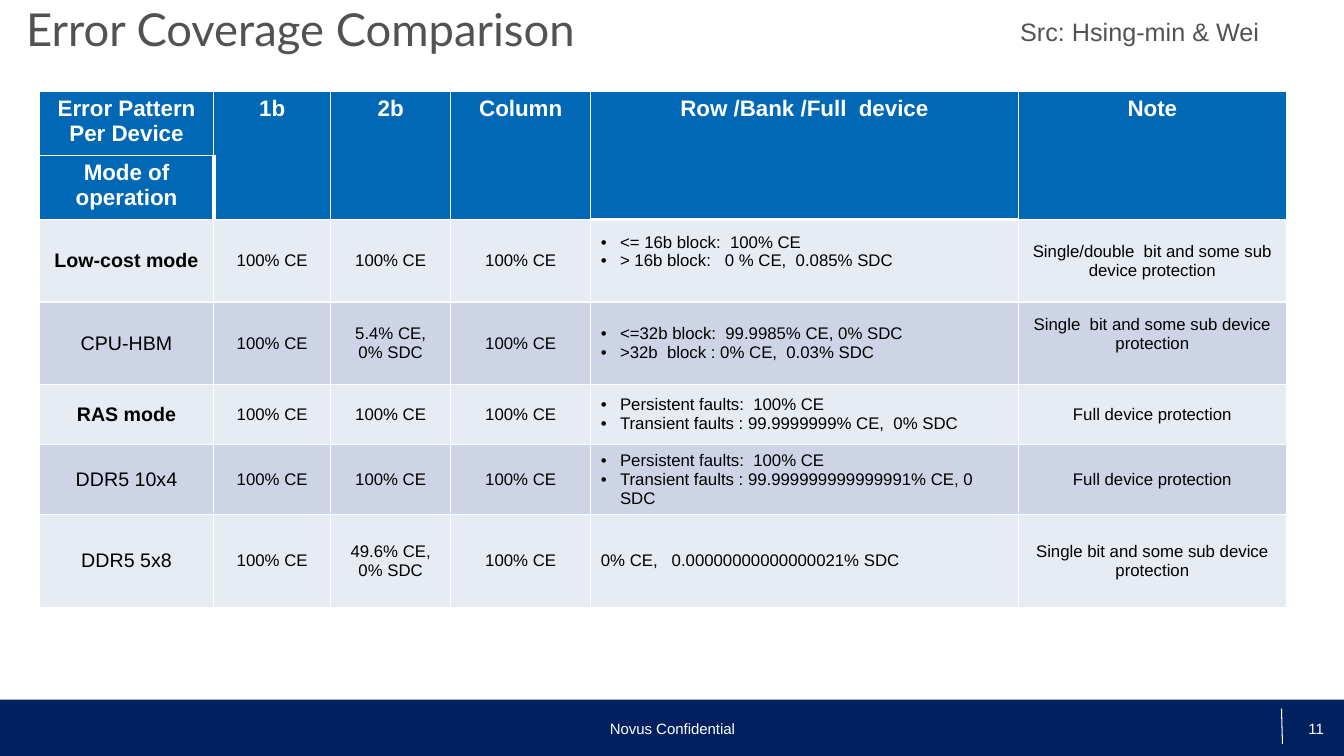
from dataclasses import dataclass

from lxml import etree
from pptx import Presentation
from pptx.dml.color import RGBColor
from pptx.enum.shapes import MSO_CONNECTOR, MSO_SHAPE
from pptx.enum.text import MSO_ANCHOR, PP_ALIGN
from pptx.oxml.ns import qn
from pptx.util import Inches, Pt

LEFT, CENTER, RIGHT = PP_ALIGN.LEFT, PP_ALIGN.CENTER, PP_ALIGN.RIGHT
TOP, MIDDLE = MSO_ANCHOR.TOP, MSO_ANCHOR.MIDDLE
RECTANGLE = MSO_SHAPE.RECTANGLE
STRAIGHT = MSO_CONNECTOR.STRAIGHT


@dataclass(frozen=True)
class Theme:
    white: str = "FFFFFF"
    black: str = "000000"
    grey: str = "525252"
    navy: str = "002060"
    header: str = "0068B5"
    bands: tuple = ("E7EBF3", "CCD4E5")
    body_font: str = "Arial"
    title_font: str = "Lato"
    title: float = 32.4
    source: float = 18
    heading: float = 16
    mode: float = 14
    cell: float = 12
    footer: float = 10.7
    border: float = 1
    thick: float = 3


T = Theme()

COLS = [1.73, 1.16, 1.19, 1.39, 4.24, 2.66]
ROWS = [0.63, 0.63, 0.82, 0.82, 0.59, 0.7, 0.92]
HEADINGS = ["Error Pattern Per Device", "1b", "2b", "Column",
            "Row /Bank /Full  device", "Note"]
FULL = "100% CE"
MODES = [
    ["Low-cost mode", FULL, FULL, FULL,
     "<= 16b block:  100% CE\n> 16b block:   0 % CE,  0.085% SDC",
     "Single/double  bit and some sub device protection"],
    ["CPU-HBM", FULL, "5.4% CE,\n0% SDC", FULL,
     "<=32b block:  99.9985% CE, 0% SDC\n>32b  block : 0% CE,  0.03% SDC",
     "Single  bit and some sub device protection"],
    ["RAS mode", FULL, FULL, FULL,
     "Persistent faults:  100% CE\nTransient faults : 99.9999999% CE,  0% SDC",
     "Full device protection"],
    ["DDR5 10x4", FULL, FULL, FULL,
     "Persistent faults:  100% CE\n"
     "Transient faults : 99.999999999999991% CE, 0 SDC",
     "Full device protection"],
    ["DDR5 5x8", FULL, "49.6% CE, 0% SDC", FULL,
     "0% CE,   0.00000000000000021% SDC",
     "Single bit and some sub device protection"],
]
BOLD_MODES = {"Low-cost mode", "RAS mode"}
DEVICE_COL = 4
RAISED = {(2, 4), (3, 5)}  # cells whose text sits above the middle
THICK = {(1, 0): "R", (1, DEVICE_COL): "B", (2, DEVICE_COL): "T"}


def rgb(color):
    return RGBColor.from_string(color)


def style(p, size, color, font=T.body_font, bold=False, align=LEFT):
    p.alignment = align
    for r in p.runs:
        r.font.name = font
        r.font.size = Pt(size)
        r.font.bold = bold
        r.font.color.rgb = rgb(color)


def add_text(slide, box, text, size, color, font=T.body_font, align=LEFT,
             anchor=TOP, inset=(0.1, 0.05), spacing=None):
    sp = slide.shapes.add_textbox(*map(Inches, box))
    tf = sp.text_frame
    tf.word_wrap = True
    tf.vertical_anchor = anchor
    tf.margin_left = tf.margin_right = Inches(inset[0])
    tf.margin_top = tf.margin_bottom = Inches(inset[1])
    tf.text = text
    p = tf.paragraphs[0]
    if spacing:
        p.line_spacing = spacing
    style(p, size, color, font, align=align)


def add_bullet(p):
    pPr = p._p.get_or_add_pPr()
    pPr.set("marL", str(Inches(0.19)))
    pPr.set("indent", str(Inches(-0.19)))
    etree.SubElement(pPr, qn("a:buFont"), typeface=T.body_font)
    etree.SubElement(pPr, qn("a:buChar"), char="•")


def set_borders(cell, thick_side):
    tcPr = cell._tc.get_or_add_tcPr()
    for side in "LRTB":
        width = T.thick if side == thick_side else T.border
        ln = etree.SubElement(tcPr, qn(f"a:ln{side}"), w=str(Pt(width)))
        fill = etree.SubElement(ln, qn("a:solidFill"))
        etree.SubElement(fill, qn("a:srgbClr"), val=T.white)


def fill_cell(table, row, col, text, fill, size, color, bold=False,
              align=CENTER, anchor=MIDDLE):
    cell = table.cell(row, col)
    set_borders(cell, THICK.get((row, col)))
    cell.fill.solid()
    cell.fill.fore_color.rgb = rgb(fill)
    cell.vertical_anchor = anchor
    if (row, col) in RAISED:
        cell.margin_bottom = Inches(0.23)
    cell.text_frame.text = text
    for p in cell.text_frame.paragraphs:
        if col == DEVICE_COL and "\n" in text:
            add_bullet(p)
        style(p, size, color, bold=bold, align=align)


def add_coverage_table(slide):
    frame = slide.shapes.add_table(
        len(ROWS), len(COLS), Inches(0.39), Inches(0.91),
        Inches(sum(COLS)), Inches(sum(ROWS)))
    table = frame.table
    for column, width in zip(table.columns, COLS):
        column.width = Inches(width)
    for row, height in zip(table.rows, ROWS):
        row.height = Inches(height)

    # Two header rows, merged except in the first column
    for row, texts in enumerate([HEADINGS, ["Mode of operation"] + [""] * 5]):
        for col, text in enumerate(texts):
            fill_cell(table, row, col, text, T.header, T.heading, T.white,
                      bold=True, anchor=TOP)
    for col in range(1, len(COLS)):
        table.cell(0, col).merge(table.cell(1, col))

    # One banded row per mode
    for i, values in enumerate(MODES):
        for col, text in enumerate(values):
            fill_cell(table, i + 2, col, text, T.bands[i % 2],
                      T.cell if col else T.mode, T.black,
                      bold=text in BOLD_MODES,
                      align=LEFT if col == DEVICE_COL else CENTER)


def add_footer(slide):
    bar = slide.shapes.add_shape(RECTANGLE, Inches(0), Inches(6.94),
                                 Inches(13.33), Inches(0.56))
    bar.shadow.inherit = False
    bar.fill.solid()
    bar.fill.fore_color.rgb = rgb(T.navy)
    bar.line.fill.background()

    # Divider beside the page number
    divider = slide.shapes.add_connector(
        STRAIGHT, Inches(12.71), Inches(7.03), Inches(12.72), Inches(7.38))
    divider.line.color.rgb = rgb(T.white)
    divider.line.width = Pt(0.75)
    etree.SubElement(divider._element.spPr, qn("a:effectLst"))

    add_text(slide, (4.56, 7.03, 4.22, 0.4), "Novus Confidential", T.footer,
             T.white, align=CENTER, anchor=MIDDLE)
    add_text(slide, (10.02, 7.03, 3.11, 0.4), "11", T.footer, T.white,
             align=RIGHT, anchor=MIDDLE, inset=(0, 0))


def main():
    prs = Presentation()
    prs.slide_width, prs.slide_height = Inches(13.33), Inches(7.5)
    slide = prs.slides.add_slide(prs.slide_layouts[6])
    add_footer(slide)
    add_coverage_table(slide)
    # Title and source
    add_text(slide, (0.16, 0.11, 12, 0.54), "Error Coverage Comparison",
             T.title, T.grey, font=T.title_font, spacing=0.7)
    add_text(slide, (10.02, 0.11, 2.66, 0.4), "Src: Hsing-min & Wei",
             T.source, T.grey)
    prs.save("out.pptx")


if __name__ == "__main__":
    main()
